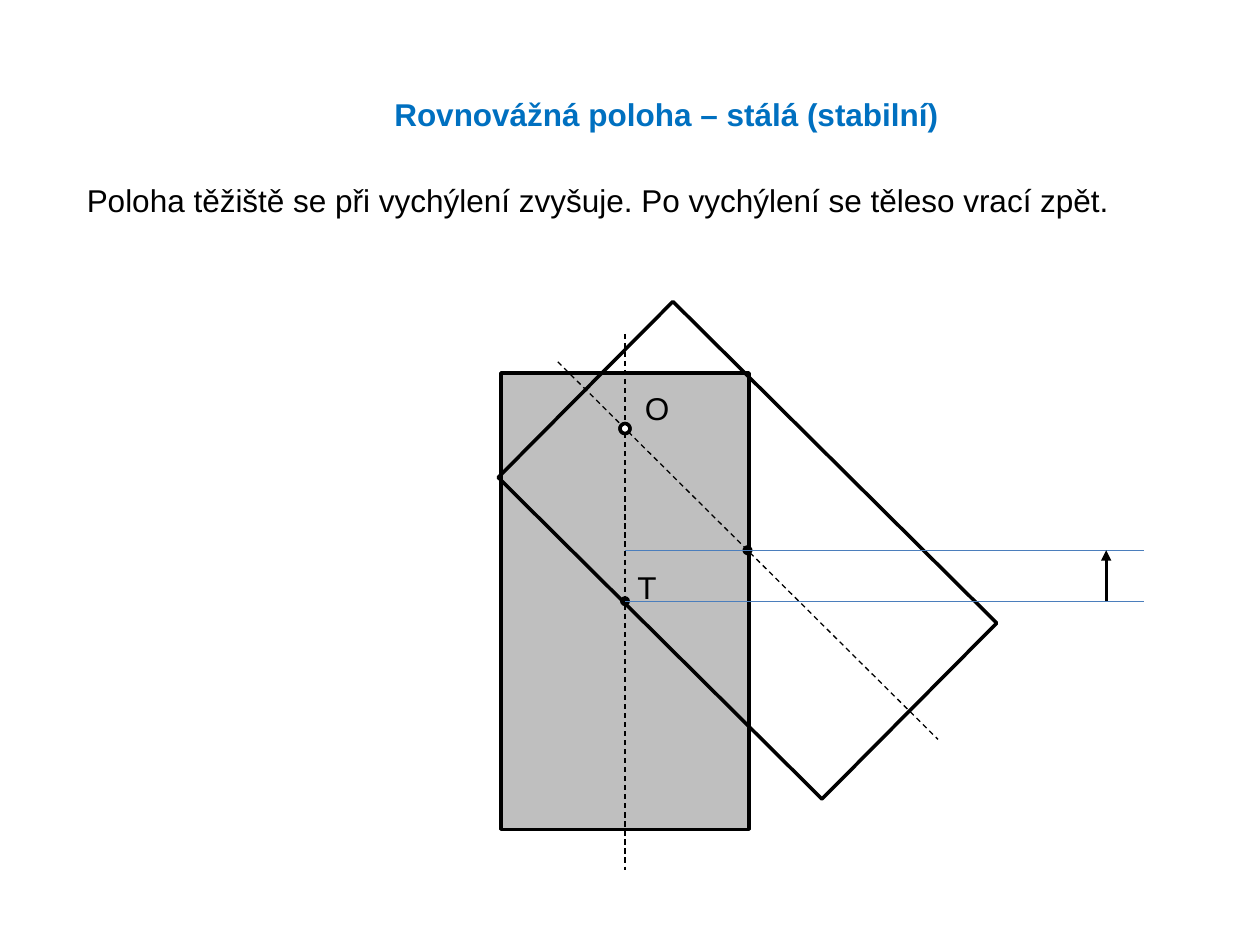
import math
import lxml.etree
import pptx
import pptx.dml.color
import pptx.enum.dml
import pptx.enum.shapes
import pptx.enum.text
import pptx.oxml.ns
import pptx.util

Cm, Pt = pptx.util.Cm, pptx.util.Pt
SHAPE = pptx.enum.shapes.MSO_SHAPE

THEME = {
    "font": "Arial", "size": 18,
    "title": "0070C0", "ink": "000000", "body": "BFBFBF",
    "paper": "FFFFFF", "level": "4B7EBC",
    "outline": 2, "thin": 0.75, "arrow": 1.5,
}

# Content: text, left, top, width, height (cm), colour, bold, wrap
TITLE = ("Rovnovážná poloha – stálá (stabilní)", 7.7, 1.8, 11.81, 1.02, "title", True, True)
SENTENCE = ("Poloha těžiště se při vychýlení zvyšuje. Po vychýlení se těleso vrací zpět.",
            1.5, 3.53, 22, 1.02, "ink", False, True)
LABELS = [
    ("O", 12.75, 7.72, 1.02, 1.02, "ink", False, False),
    ("T", 12.6, 11.33, 0.91, 1.02, "ink", False, False),
]

# Geometry of the hanging body (cm); distances run down the axis from the pivot
PIVOT = (12.6, 8.64)
CENTROID = 3.48
AXIS_ENDS = (-1.91, 8.89)
BODY_SIZE = (5, 9.2)
DOT_SIZE = (0.2, 0.2)
TILT = 45.2
LEVEL_END = 23.06
ARROW_X = 22.3


def color(name):
    return pptx.dml.color.RGBColor.from_string(THEME[name])


def on_axis(distance, tilt):
    angle = math.radians(tilt)
    return (PIVOT[0] + distance * math.sin(angle), PIVOT[1] + distance * math.cos(angle))


def add_text(page, content):
    text, left, top, width, height, ink, bold, wrap = content
    box = page.shapes.add_textbox(Cm(left), Cm(top), Cm(width), Cm(height))
    box.text_frame.word_wrap = wrap
    box.text_frame.auto_size = pptx.enum.text.MSO_AUTO_SIZE.SHAPE_TO_FIT_TEXT
    span = box.text_frame.paragraphs[0].add_run()
    span.text = text
    span.font.name, span.font.size = THEME["font"], Pt(THEME["size"])
    span.font.bold, span.font.color.rgb = bold, color(ink)


def add_centred(parent, kind, center, size, tilt, fill, outlined):
    shape = parent.shapes.add_shape(
        kind, Cm(center[0] - size[0] / 2), Cm(center[1] - size[1] / 2), Cm(size[0]), Cm(size[1]))
    shape.rotation = -tilt
    shape.shadow.inherit = False
    if fill:
        shape.fill.solid()
        shape.fill.fore_color.rgb = color(fill)
    else:
        shape.fill.background()
    if outlined:
        shape.line.color.rgb = color("ink")
        shape.line.width = Pt(THEME["outline"])
    else:
        shape.line.fill.background()


def add_line(parent, start, end, ink, width, dashed=False, arrow=False):
    line = parent.shapes.add_connector(
        pptx.enum.shapes.MSO_CONNECTOR.STRAIGHT, *(Cm(value) for value in (*start, *end)))
    line.line.color.rgb = color(ink)
    line.line.width = Pt(THEME[width])
    if dashed:
        line.line.dash_style = pptx.enum.dml.MSO_LINE.DASH
    qn = pptx.oxml.ns.qn
    if arrow:
        lxml.etree.SubElement(line.line._get_or_add_ln(), qn("a:tailEnd"), type="triangle")
    lxml.etree.SubElement(line._element.spPr, qn("a:effectLst"))


def add_body(page, tilt, fill):
    body = page.shapes.add_group_shape()
    centroid = on_axis(CENTROID, tilt)
    add_centred(body, SHAPE.RECTANGLE, centroid, BODY_SIZE, tilt, fill, True)
    start, end = (on_axis(distance, tilt) for distance in AXIS_ENDS)
    add_line(body, start, end, "ink", "thin", dashed=True)
    add_centred(body, SHAPE.OVAL, centroid, DOT_SIZE, tilt, "ink", False)
    add_centred(body, SHAPE.OVAL, PIVOT, DOT_SIZE, tilt, "paper", True)


def main():
    deck = pptx.Presentation()
    deck.slide_width, deck.slide_height = Cm(25.4), Cm(19.05)
    page = deck.slides.add_slide(deck.slide_layouts[6])

    # Heading and sentence
    add_text(page, TITLE)
    add_text(page, SENTENCE)

    # Body at rest, then tilted about the pivot
    add_body(page, 0, "body")
    add_body(page, TILT, None)
    for label in LABELS:
        add_text(page, label)

    # Centroid levels and the rise between them
    low, high = (on_axis(CENTROID, tilt)[1] for tilt in (0, TILT))
    for level in (low, high):
        add_line(page, (PIVOT[0], level), (LEVEL_END, level), "level", "thin")
    add_line(page, (ARROW_X, low), (ARROW_X, high), "ink", "arrow", arrow=True)

    deck.save("out.pptx")


if __name__ == "__main__":
    main()
